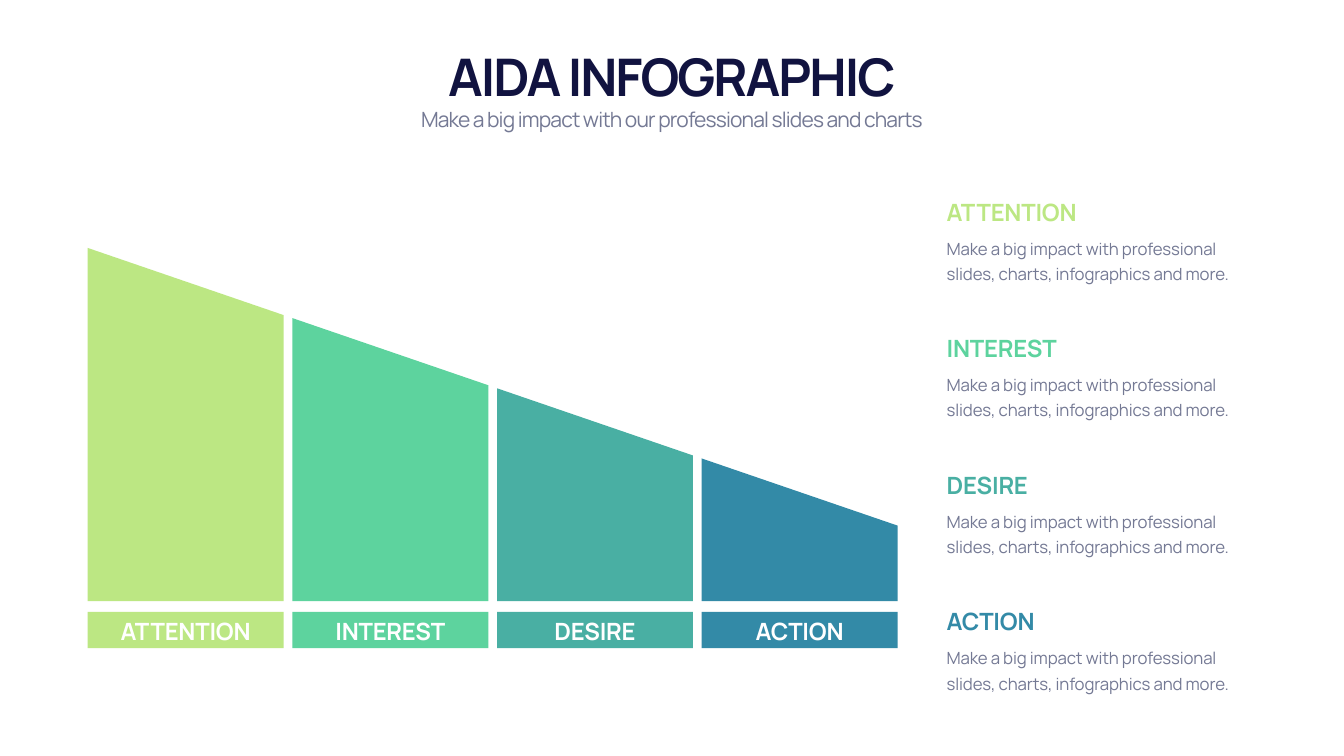
from pptx import Presentation
from pptx.dml.color import RGBColor
from pptx.enum.shapes import MSO_SHAPE
from pptx.enum.text import MSO_ANCHOR, MSO_AUTO_SIZE, PP_ALIGN
from pptx.util import Pt

NAVY = RGBColor(0x11, 0x13, 0x40)
GREY = RGBColor(0x74, 0x79, 0x94)
WHITE = RGBColor(0xFF, 0xFF, 0xFF)
LIME = RGBColor(0xBC, 0xE7, 0x83)
GREEN = RGBColor(0x5D, 0xD3, 0x9E)
TEAL = RGBColor(0x49, 0xAF, 0xA3)
BLUE = RGBColor(0x33, 0x8A, 0xA7)

FONT = "Manrope"
TITLE = "AIDA INFOGRAPHIC"
SUBTITLE = "Make a big impact with our professional slides and charts"
DESCRIPTION = "Make a big impact with professional slides, charts, infographics and more."
STAGES = [("ATTENTION", LIME), ("INTEREST", GREEN), ("DESIRE", TEAL), ("ACTION", BLUE)]

BAR_LEFT, BAR_WIDTH, BAR_PITCH = 125.3, 279.8, 292.3
BAR_TOP, BAR_BOTTOM, SLOPE = 354.2, 858.9, 0.343
LABEL_TOP, LABEL_HEIGHT = 874, 52
SIDE_LEFT, SIDE_TOP, SIDE_WIDTH, SIDE_PITCH = 1345, 278, 457, 195.1


def write(frame, text, size, color, bold=False, spacing=0, align=PP_ALIGN.LEFT,
          anchor=MSO_ANCHOR.TOP, line=None):
    frame.word_wrap = True
    frame.vertical_anchor = anchor
    frame.text = text
    para = frame.paragraphs[0]
    para.alignment = align
    if line:
        para.line_spacing = Pt(line)
    span = para.runs[0]
    span.font.name = FONT
    span.font.size = Pt(size)
    span.font.bold = bold
    span.font.color.rgb = color
    span._r.get_or_add_rPr().set("spc", str(round(spacing * 100)))


def add_text(page, left, top, width, height, *content, **style):
    box = page.shapes.add_textbox(Pt(left), Pt(top), Pt(width), Pt(height))
    write(box.text_frame, *content, **style)
    box.text_frame.auto_size = MSO_AUTO_SIZE.SHAPE_TO_FIT_TEXT


def paint(shape, color):
    shape.shadow.inherit = False
    shape.fill.solid()
    shape.fill.fore_color.rgb = color
    shape.line.fill.background()


def add_bar(page, left, color):
    right = left + BAR_WIDTH
    corners = [(x, BAR_TOP + (x - BAR_LEFT) * SLOPE) for x in (left, right)]
    corners += [(right, BAR_BOTTOM), (left, BAR_BOTTOM)]
    points = [(Pt(x), Pt(y)) for x, y in corners]
    builder = page.shapes.build_freeform(*points[0])
    builder.add_line_segments(points[1:], close=True)
    paint(builder.convert_to_shape(), color)


def add_label(page, left, name, color):
    label = page.shapes.add_shape(MSO_SHAPE.RECTANGLE, Pt(left), Pt(LABEL_TOP),
                                  Pt(BAR_WIDTH), Pt(LABEL_HEIGHT))
    paint(label, color)
    frame = label.text_frame
    frame.margin_top, frame.margin_bottom = Pt(2), 0
    write(frame, name, 34, WHITE, bold=True, spacing=-0.3,
          align=PP_ALIGN.CENTER, anchor=MSO_ANCHOR.MIDDLE)


def main():
    deck = Presentation()
    deck.slide_width, deck.slide_height = Pt(1919.52), Pt(1080)
    page = deck.slides.add_slide(deck.slide_layouts[6])

    add_text(page, 119.5, 59, 1680, 97.2, TITLE, 74, NAVY, bold=True, spacing=-2.9,
             align=PP_ALIGN.CENTER, anchor=MSO_ANCHOR.BOTTOM)
    add_text(page, 119.5, 149, 1680, 44, SUBTITLE, 30, GREY, spacing=-1.2,
             align=PP_ALIGN.CENTER)

    for index, (name, color) in enumerate(STAGES):
        left = BAR_LEFT + index * BAR_PITCH
        add_bar(page, left, color)
        add_label(page, left, name, color)
        top = SIDE_TOP + index * SIDE_PITCH
        add_text(page, SIDE_LEFT, top, SIDE_WIDTH, 48.2, name, 34, color, bold=True,
                 spacing=-0.3, anchor=MSO_ANCHOR.BOTTOM)
        add_text(page, SIDE_LEFT, top + 51.8, SIDE_WIDTH, 78.5, DESCRIPTION, 24, GREY,
                 spacing=-0.2, line=36)

    deck.save("out.pptx")


if __name__ == "__main__":
    main()
